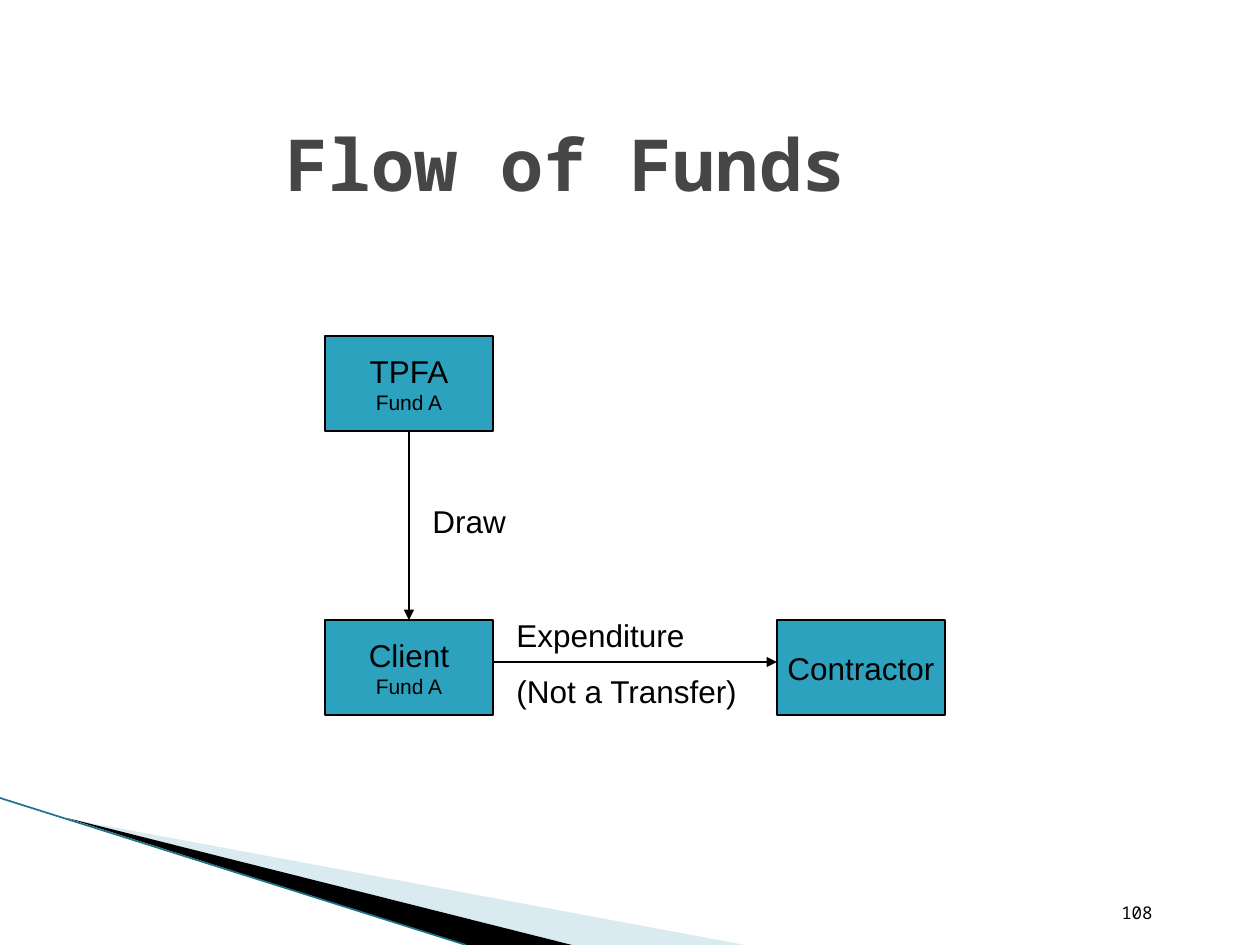
"""Build the flow of funds slide."""
from lxml.etree import SubElement
from pptx import Presentation
from pptx.dml.color import RGBColor
from pptx.enum.shapes import MSO_CONNECTOR as Link, MSO_SHAPE as Form
from pptx.enum.text import MSO_ANCHOR as Anchor, MSO_AUTO_SIZE as Fit, PP_ALIGN as Align
from pptx.oxml.ns import qn
from pptx.util import Emu, Pt

UNIT = 914400 / 126
MONO = "Noto Sans Mono"
BOX_W, BOX_H = 168, 95


def px(*vals):
    """Turn px lengths into EMU."""
    return [Emu(round(val * UNIT)) for val in vals]


def paint(form, color):
    """Give a fill or font colour format a solid hex colour."""
    form.rgb = RGBColor.from_string(color)


def put(item, style):
    """Set every attribute in a dict of format values."""
    for name, val in style.items():
        setattr(item, name, val)


def write(frame, lines, style, align=Align.LEFT, color="000000", gap=0):
    """Fill a text frame with (text, size) lines."""
    for num, (text, size) in enumerate(lines):
        para = frame.add_paragraph() if num else frame.paragraphs[0]
        para.text = text
        para.alignment = align
        if num and gap:
            para.space_before = Pt(gap)
        put(para.font, {"size": Pt(size), **style})
        paint(para.font.color, color)


def add_head(slide, text):
    """Place and format the title."""
    head = slide.shapes.title
    put(head, dict(zip(("left", "top", "width", "height"), px(273, 95, 672, 136))))
    put(head.text_frame, {"vertical_anchor": Anchor.MIDDLE, "word_wrap": True})
    write(head.text_frame, [(text, 41)], {"name": MONO, "bold": True}, color="464646")


def add_box(slide, x, y, lines):
    """Add one party in the flow."""
    box = slide.shapes.add_shape(Form.FLOWCHART_PROCESS, *px(x, y, BOX_W, BOX_H))
    box.shadow.inherit = False
    box.fill.solid()
    paint(box.fill.fore_color, "2DA2BF")
    paint(box.line.color, "000000")
    box.line.width = Pt(0.75)
    put(box.text_frame, {"vertical_anchor": Anchor.MIDDLE, "word_wrap": False})
    write(box.text_frame, lines, {"name": "Arial"}, Align.CENTER)
    return box


def add_line(slide, ends, color="000000", width=0.75, head=True):
    """Add a straight line, with an arrowhead if wanted."""
    line = slide.shapes.add_connector(Link.STRAIGHT, *px(*ends))
    paint(line.line.color, color)
    line.line.width = Pt(width)
    if head:
        SubElement(line.line._get_or_add_ln(), qn("a:tailEnd"), type="triangle")
    SubElement(line._element.spPr, qn("a:effectLst"))
    return line


def add_text(slide, area, lines, style, align=Align.LEFT, **frame):
    """Add a wrapped text box."""
    box = slide.shapes.add_textbox(*px(*area))
    put(box.text_frame, {"word_wrap": True, **frame})
    write(box.text_frame, lines, style, align, gap=10)


def add_wedge(slide, points, color, alpha=100):
    """Add a filled outline through the points."""
    pen = slide.shapes.build_freeform(*points[0], scale=UNIT)
    pen.add_line_segments(points[1:], close=True)
    wedge = pen.convert_to_shape()
    wedge.shadow.inherit = False
    wedge.line.fill.background()
    wedge.fill.solid()
    paint(wedge.fill.fore_color, color)
    if alpha < 100:
        tint = wedge._element.spPr.find(".//" + qn("a:srgbClr"))
        SubElement(tint, qn("a:alpha"), val=str(alpha * 1000))


def main():
    """Build and save the slide."""
    deck = Presentation()
    deck.slide_width, deck.slide_height = px(1260, 945)
    slide = deck.slides.add_slide(deck.slide_layouts[5])

    add_wedge(slide, [(69, 819), (745, 945), (573, 945)], "A0CBDC", 40)
    add_wedge(slide, [(67, 818), (572, 945), (466, 945)], "000000")
    add_line(slide, (0, 798, 466, 945), "1B7587", 0.95, head=False)
    add_head(slide, "Flow of Funds")

    fund = ("Fund A", 12)
    payer = add_box(slide, 325, 336, [("TPFA", 18), fund])
    client = add_box(slide, 325, 620, [("Client", 18), fund])
    add_box(slide, 777, 620, [("Contractor", 18)])

    draw = add_line(slide, (409, 431, 409, 620))
    draw.begin_connect(payer, 2)
    draw.end_connect(client, 0)
    add_line(slide, (493, 662, 777, 662))

    grow = {"auto_size": Fit.SHAPE_TO_FIT_TEXT}
    arial = {"name": "Arial"}
    add_text(slide, (420, 496, 116, 50), [("Draw", 18)], arial, **grow)
    add_text(slide, (504, 610, 262, 107),
             [("Expenditure", 18), ("(Not a Transfer)", 18)], arial, **grow)
    add_text(slide, (903, 866, 262, 63), [("108", 10)], {"name": MONO},
             Align.RIGHT, vertical_anchor=Anchor.BOTTOM)
    deck.save("out.pptx")


if __name__ == "__main__":
    main()
